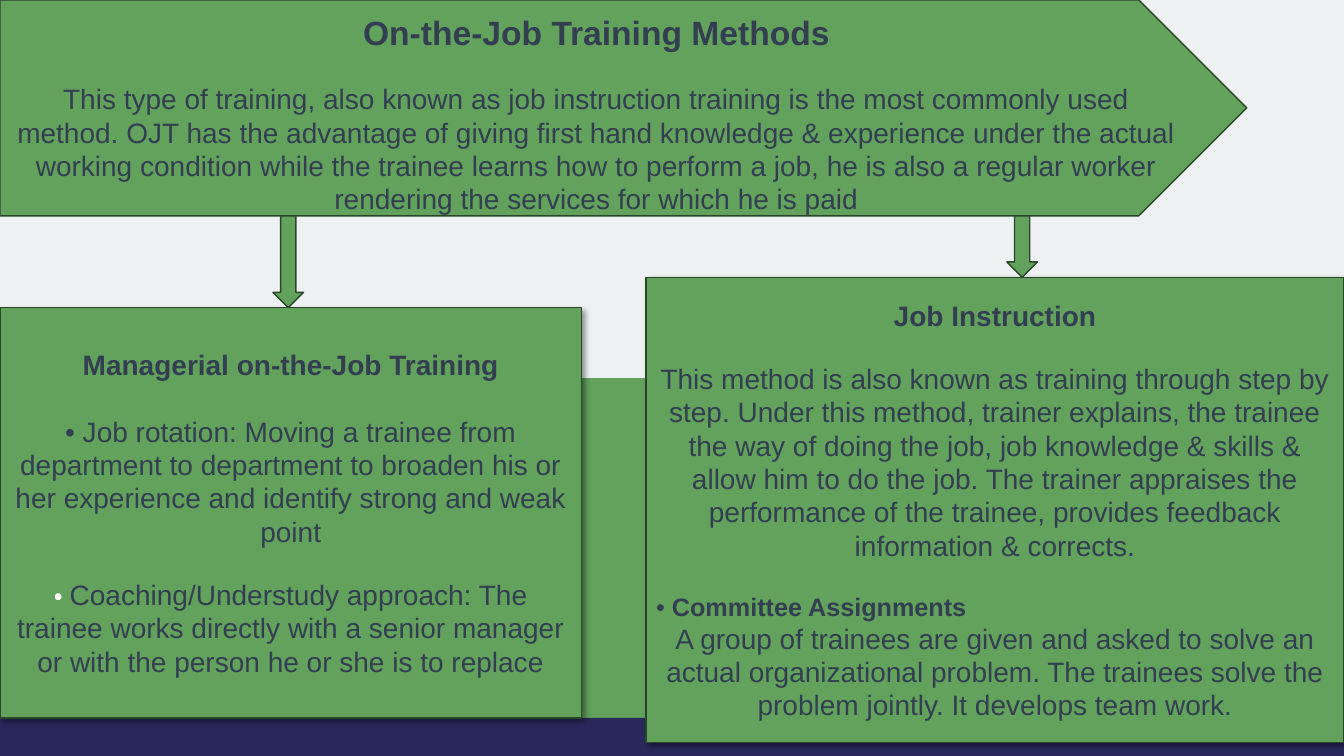
from dataclasses import dataclass

from lxml import etree
from pptx import Presentation
from pptx import util as u
from pptx.dml.color import RGBColor
from pptx.enum import shapes, text
from pptx.oxml import ns

PALE = RGBColor(0xED, 0xF1, 0xF2)
GREEN = RGBColor(0x62, 0xA2, 0x5D)
DARK_GREEN = RGBColor(0x2B, 0x47, 0x29)
NAVY = RGBColor(0x29, 0x28, 0x5D)
SLATE = RGBColor(0x33, 0x3F, 0x50)
WHITE = RGBColor(0xFF, 0xFF, 0xFF)

FONT = "Arial"
LEADING = 1.19  # line height relative to text size
GAP = 21.5  # space between blocks of text
WIDTH, HEIGHT = 960, 540
RECT = shapes.MSO_SHAPE.RECTANGLE
PENTAGON = shapes.MSO_SHAPE.PENTAGON
DOWN_ARROW = shapes.MSO_SHAPE.DOWN_ARROW


@dataclass
class Line:
    words: str
    size: float = 20
    bold: bool = False
    before: float = 0
    align: text.PP_ALIGN = text.PP_ALIGN.CENTER
    bullet: str = ""
    bullet_color: RGBColor = SLATE


@dataclass
class Block:
    kind: shapes.MSO_SHAPE
    left: float
    top: float
    width: float
    height: float
    fill: RGBColor = GREEN
    outlined: bool = True
    shadow: bool = False
    lines: tuple[Line, ...] = ()
    anchor: text.MSO_ANCHOR = text.MSO_ANCHOR.MIDDLE
    inset_top: float = 3.6


def add_span(para, words: str, *, size: float, bold: bool = False,
             color: RGBColor = SLATE) -> None:
    span = para.add_run()
    span.text = words
    span.font.name = FONT
    span.font.size = u.Pt(size)
    span.font.bold = bold
    span.font.color.rgb = color


def add_shadow(box) -> None:
    effects = box._element.spPr.find(ns.qn("a:effectLst"))
    outer = etree.SubElement(effects, ns.qn("a:outerShdw"), blurRad=str(u.Pt(4)),
                             dist=str(u.Pt(3)), dir=str(45 * 60000),
                             algn="tl", rotWithShape="0")
    color = etree.SubElement(outer, ns.qn("a:srgbClr"), val="000000")
    etree.SubElement(color, ns.qn("a:alpha"), val="40000")


def write_lines(box, block: Block) -> None:
    frame = box.text_frame
    frame.word_wrap = True
    frame.vertical_anchor = block.anchor
    frame.margin_top = u.Pt(block.inset_top)
    for index, line in enumerate(block.lines):
        para = frame.add_paragraph() if index else frame.paragraphs[0]
        para.alignment = line.align
        para.line_spacing = u.Pt(line.size * LEADING)
        para.space_before = u.Pt(line.before)
        if line.bullet:
            add_span(para, line.bullet, size=18, color=line.bullet_color)
        add_span(para, line.words, size=line.size, bold=line.bold)


def draw_block(page, block: Block) -> None:
    box = page.shapes.add_shape(block.kind, u.Pt(block.left), u.Pt(block.top),
                                u.Pt(block.width), u.Pt(block.height))
    box.shadow.inherit = False
    box.fill.solid()
    box.fill.fore_color.rgb = block.fill
    if block.outlined:
        box.line.color.rgb = DARK_GREEN
        box.line.width = u.Pt(1)
    else:
        box.line.fill.background()
    if block.shadow:
        add_shadow(box)
    if block.lines:
        write_lines(box, block)


INTRO = (
    Line("On-the-Job Training Methods", size=24, bold=True),
    Line("This type of training, also known as job instruction training is the "
         "most commonly used method. OJT has the advantage of giving first hand "
         "knowledge & experience under the actual working condition while the "
         "trainee learns how to perform a job, he is also a regular worker "
         "rendering the services for which he is paid", before=GAP),
)
MANAGERIAL = (
    Line("Managerial on-the-Job Training", bold=True),
    Line("• Job rotation: Moving a trainee from department to department to "
         "broaden his or her experience and identify strong and weak point",
         before=24),
    Line("Coaching/Understudy approach: The trainee works directly with a senior "
         "manager or with the person he or she is to replace",
         before=GAP, bullet="• ", bullet_color=WHITE),
)
INSTRUCTION = (
    Line("Job Instruction", bold=True),
    Line("This method is also known as training through step by step. Under this "
         "method, trainer explains, the trainee the way of doing the job, job "
         "knowledge & skills & allow him to do the job. The trainer appraises the "
         "performance of the trainee, provides feedback information & corrects.",
         before=GAP),
    Line("Committee Assignments", size=18, bold=True, before=GAP,
         align=text.PP_ALIGN.LEFT, bullet="• "),
    Line("A group of trainees are given and asked to solve an actual "
         "organizational problem. The trainees solve the problem jointly. It "
         "develops team work."),
)

BLOCKS = (
    # Background bands
    Block(RECT, 0, 270, WIDTH, 270, outlined=False),
    Block(RECT, 0, 512.8, WIDTH, 27.2, fill=NAVY, outlined=False),
    # Introduction banner
    Block(PENTAGON, 0, 0, 890.6, 154.2, lines=INTRO,
          anchor=text.MSO_ANCHOR.TOP, inset_top=8.7),
    # Arrows from the banner to the two methods
    Block(DOWN_ARROW, 195, 154.2, 21.8, 65.6),
    Block(DOWN_ARROW, 719.2, 154.2, 21.8, 43.8),
    # The two methods
    Block(RECT, 0, 219.8, 415.4, 293, shadow=True, lines=MANAGERIAL),
    Block(RECT, 461.6, 198, 498.4, 332.6, shadow=True, lines=INSTRUCTION),
)


def main() -> None:
    deck = Presentation()
    deck.slide_width, deck.slide_height = u.Pt(WIDTH), u.Pt(HEIGHT)
    page = deck.slides.add_slide(deck.slide_layouts[6])
    page.background.fill.solid()
    page.background.fill.fore_color.rgb = PALE
    for block in BLOCKS:
        draw_block(page, block)
    deck.save("out.pptx")


if __name__ == "__main__":
    main()
